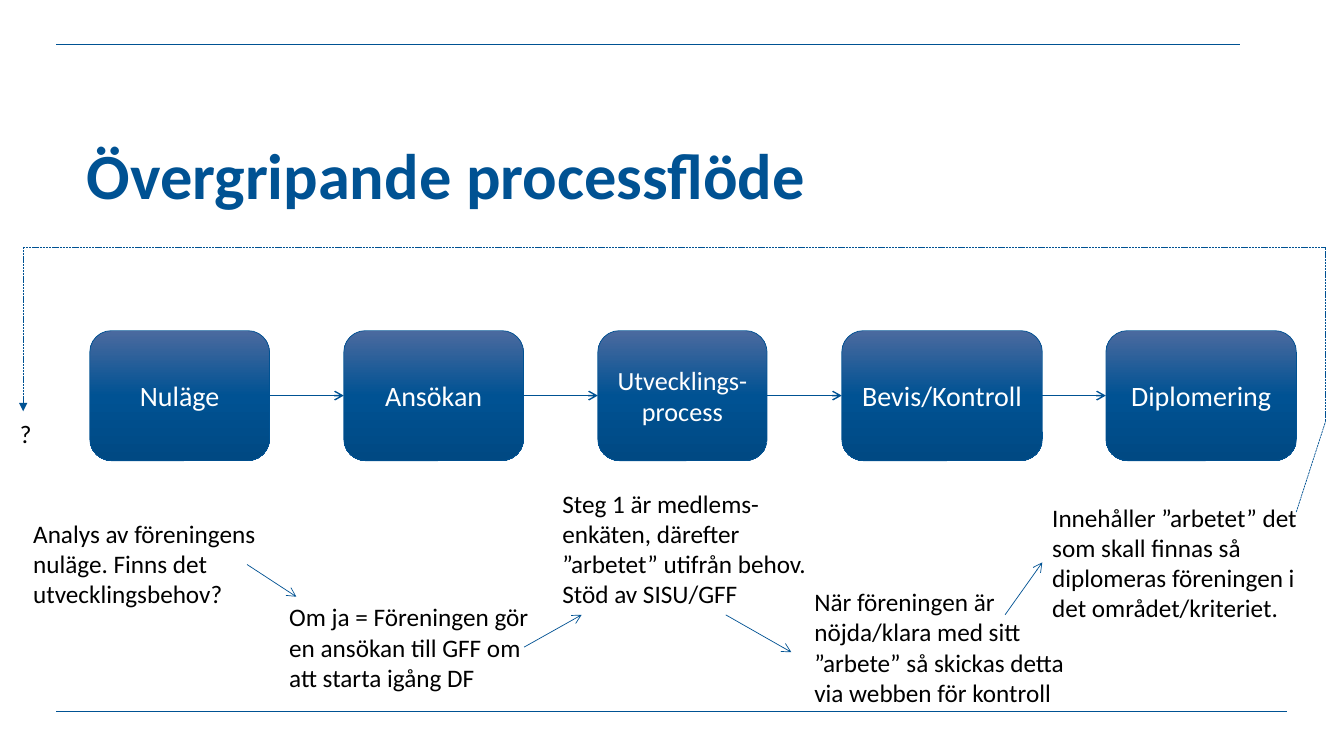
from copy import deepcopy
from dataclasses import dataclass
from itertools import pairwise

from lxml.etree import SubElement
from pptx import Presentation
from pptx.dml.color import RGBColor
from pptx.enum.dml import MSO_LINE
from pptx.enum.shapes import MSO_CONNECTOR, MSO_SHAPE
from pptx.enum.text import MSO_ANCHOR, PP_ALIGN
from pptx.oxml.ns import qn
from pptx.util import Inches, Pt


@dataclass(frozen=True)
class Theme:
    """Colours, font and type sizes of the slide."""
    blue: str = "005293"
    gradient: tuple = ((0, "4B6A9F"), (0.5, "005293"), (1, "004983"))
    white: str = "FFFFFF"
    black: str = "000000"
    font: str = "Calibri"
    title: float = 46
    step: float = 20
    small_step: float = 18.7
    note: float = 18
    thin: float = 0.5
    medium: float = 1


THEME = Theme()
WIDTH, HEIGHT = Inches(13.33), Inches(7.5)

TITLE = ("Övergripande processflöde", (6.45, 17.07, 84, 11.2))
RULES = [((4.2, 5.87), (92.25, 5.87)), ((4.2, 94.13), (95.78, 94.13))]

STEP_TOP, STEP_HEIGHT = 43.73, 17.2
STEPS = [
    ("Nuläge", 6.68, 13.38, THEME.step),
    ("Ansökan", 25.58, 13.38, THEME.step),
    ("Utvecklings-process", 44.48, 12.6, THEME.small_step),
    ("Bevis/Kontroll", 62.63, 14.93, THEME.step),
    ("Diplomering", 82.28, 14.18, THEME.step),
]

NOTE_WIDTH, LINE_HEIGHT, NOTE_PADDING = 21.08, 4, 1.4
NOTES = [
    ("Analys av föreningens nuläge. Finns det utvecklingsbehov?", 1.73, 67.87, 3),
    ("Om ja = Föreningen gör en ansökan till GFF om att starta igång DF", 20.78, 78.93, 3),
    ("Steg 1 är medlems-enkäten, därefter ”arbetet” utifrån behov. Stöd av SISU/GFF",
     41.1, 63.87, 4),
    ("När föreningen är nöjda/klara med sitt ”arbete” så skickas detta via webben för kontroll",
     59.85, 76.93, 4),
    ("Innehåller ”arbetet” det som skall finnas så diplomeras föreningen i det "
     "området/kriteriet.", 77.55, 65.73, 4),
]
NOTE_ARROWS = [
    ((18.38, 74.67), (22.05, 78.93)),
    ((39, 85.6), (43.28, 81.33)),
    ((54, 81.33), (58.88, 86.27)),
    ((74.78, 81.33), (77.55, 74.4)),
]

RETURN_ROUTE = [(96.45, 67.73), (98.63, 55.73), (98.63, 32.67), (1.73, 32.67), (1.73, 54.4)]
QUESTION = ("?", (0.75, 54.67, 3.98, 5.33))


def across(share):
    """Turn a percentage of the slide width into a length."""
    return round(WIDTH * share / 100)


def down(share):
    """Turn a percentage of the slide height into a length."""
    return round(HEIGHT * share / 100)


def place(area):
    """Turn a left, top, width, height area into lengths."""
    left, top, width, height = area
    return across(left), down(top), across(width), down(height)


def write(shape, text, size, colour, bold=False):
    """Fill a shape with one styled paragraph."""
    frame = shape.text_frame
    frame.word_wrap = True
    para = frame.paragraphs[0]
    para.text = text
    para.font.name = THEME.font
    para.font.size = Pt(size)
    para.font.bold = bold
    para.font.color.rgb = RGBColor.from_string(colour)
    return frame, para


def add_text(page, text, area, size=THEME.note, colour=THEME.black, bold=False):
    """Add a text box."""
    box = page.shapes.add_textbox(*place(area))
    return write(box, text, size, colour, bold)


def add_line(page, start, end, weight=THEME.thin, head=None, dashed=False):
    """Add a straight line with an optional arrowhead."""
    line = page.shapes.add_connector(
        MSO_CONNECTOR.STRAIGHT,
        across(start[0]), down(start[1]), across(end[0]), down(end[1]))
    line.line.color.rgb = RGBColor.from_string(THEME.blue)
    line.line.width = Pt(weight)
    if dashed:
        line.line.dash_style = MSO_LINE.SQUARE_DOT
    properties = line._element.spPr
    if head:
        SubElement(properties.find(qn("a:ln")), qn("a:tailEnd"), type=head)
    SubElement(properties, qn("a:effectLst"))
    return line


def add_step(page, text, left, width, size):
    """Add a rounded process box with a three-stop gradient."""
    box = page.shapes.add_shape(
        MSO_SHAPE.ROUNDED_RECTANGLE, *place((left, STEP_TOP, width, STEP_HEIGHT)))
    box.shadow.inherit = False
    box.line.color.rgb = RGBColor.from_string(THEME.blue)
    box.line.width = Pt(THEME.thin)
    box.fill.gradient()
    box.fill.gradient_angle = 270
    first = box._element.spPr.find(".//" + qn("a:gs"))
    first.addnext(deepcopy(first))
    for stop, (position, colour) in zip(box.fill.gradient_stops, THEME.gradient):
        stop.position = position
        stop.color.rgb = RGBColor.from_string(colour)
    frame, para = write(box, text, size, THEME.white)
    frame.vertical_anchor = MSO_ANCHOR.MIDDLE
    para.alignment = PP_ALIGN.CENTER
    return box


def add_title(page):
    """Add the heading, set on the lower edge of its area."""
    frame, para = add_text(page, *TITLE, THEME.title, THEME.blue, True)
    frame.margin_left = frame.margin_top = frame.margin_right = frame.margin_bottom = 0
    frame.vertical_anchor = MSO_ANCHOR.BOTTOM
    para.line_spacing = 0.9


def add_process(page):
    """Add the process boxes and the arrows that join them."""
    boxes = [add_step(page, *step) for step in STEPS]
    middle = STEP_TOP + STEP_HEIGHT / 2
    for (box, following), (step, target) in zip(pairwise(boxes), pairwise(STEPS)):
        arrow = add_line(page, (step[1] + step[2], middle), (target[1], middle),
                         THEME.medium, "arrow")
        arrow.begin_connect(box, 3)
        arrow.end_connect(following, 1)


def main():
    """Build the process slide and save it."""
    deck = Presentation()
    deck.slide_width, deck.slide_height = WIDTH, HEIGHT
    page = deck.slides.add_slide(deck.slide_layouts[6])

    for start, end in RULES:
        add_line(page, start, end)
    add_title(page)
    add_process(page)
    for text, left, top, lines in NOTES:
        add_text(page, text, (left, top, NOTE_WIDTH, lines * LINE_HEIGHT + NOTE_PADDING))
    for start, end in NOTE_ARROWS:
        add_line(page, start, end, head="arrow")
    for start, end in pairwise(RETURN_ROUTE):
        head = "triangle" if end == RETURN_ROUTE[-1] else None
        add_line(page, start, end, head=head, dashed=True)
    add_text(page, *QUESTION)

    deck.save("out.pptx")


if __name__ == "__main__":
    main()
